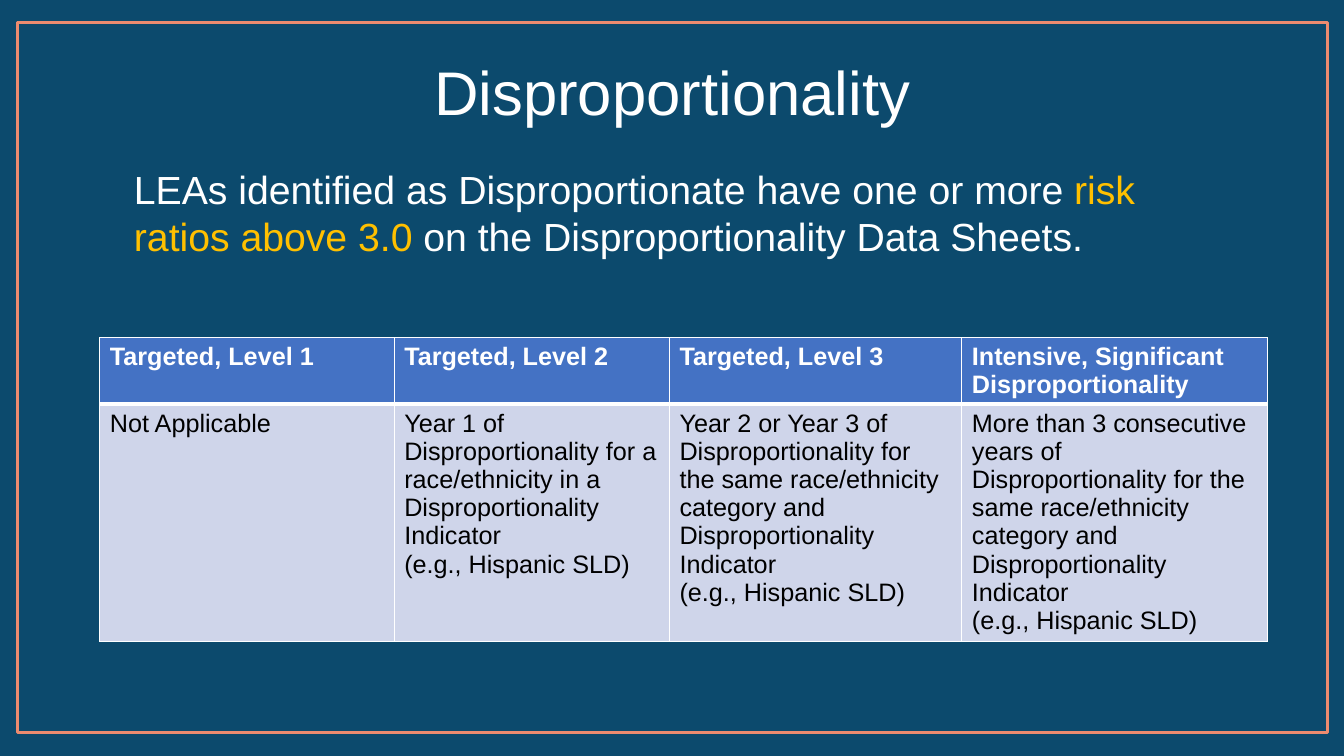
from dataclasses import dataclass

from lxml import etree
from pptx import Presentation
from pptx.dml.color import RGBColor
from pptx.enum.shapes import MSO_SHAPE
from pptx.enum.text import MSO_ANCHOR, PP_ALIGN
from pptx.oxml.ns import qn
from pptx.util import Inches, Pt

RECTANGLE = MSO_SHAPE.RECTANGLE
MIDDLE = MSO_ANCHOR.MIDDLE
CENTER = PP_ALIGN.CENTER


@dataclass(frozen=True)
class Theme:
    font: str = "Arial"
    background: str = "0C4A6D"
    frame: str = "ED8B6F"
    white: str = "FFFFFF"
    black: str = "000000"
    highlight: str = "FFC000"
    header_fill: str = "4472C4"
    body_fill: str = "CFD5EA"
    title_size: int = 44
    body_size: int = 28
    table_size: int = 18
    border: int = 1
    header_rule: int = 3


@dataclass(frozen=True)
class Level:
    heading: str
    criteria: str
    width: float


THEME = Theme()
EXAMPLE = "\n(e.g., Hispanic SLD)"
INDICATOR = "category and Disproportionality Indicator"
LEVELS = [
    Level("Targeted, Level 1", "Not Applicable", 2.92),
    Level(
        "Targeted, Level 2",
        "Year 1 of Disproportionality for a race/ethnicity in a "
        "Disproportionality Indicator" + EXAMPLE,
        2.73,
    ),
    Level(
        "Targeted, Level 3",
        f"Year 2 or Year 3 of Disproportionality for the same race/ethnicity {INDICATOR}{EXAMPLE}",
        2.9,
    ),
    Level(
        "Intensive, Significant Disproportionality",
        "More than 3 consecutive years of Disproportionality for the same "
        f"race/ethnicity {INDICATOR}{EXAMPLE}",
        3.03,
    ),
]
STATEMENT = [
    ("LEAs identified as Disproportionate have one or more ", THEME.white),
    ("risk ratios above 3.0 ", THEME.highlight),
    ("on the Disproportionality Data Sheets.", THEME.white),
]
ROW_HEIGHTS = [0.65, 2.35]


def format_run(run, size: int, color: str, bold: bool = False) -> None:
    run.font.name = THEME.font
    run.font.size = Pt(size)
    run.font.bold = bold
    run.font.color.rgb = RGBColor.from_string(color)


def set_borders(cell, bottom_width: int) -> None:
    properties = cell._tc.get_or_add_tcPr()
    for index, side in enumerate(("lnL", "lnR", "lnT", "lnB")):
        width = bottom_width if side == "lnB" else THEME.border
        line = etree.Element(qn(f"a:{side}"), w=str(Pt(width)))
        fill = etree.SubElement(line, qn("a:solidFill"))
        etree.SubElement(fill, qn("a:srgbClr"), val=THEME.white)
        properties.insert(index, line)


def fill_cell(cell, text: str, is_header: bool) -> None:
    cell.text_frame.text = text
    color = THEME.white if is_header else THEME.black
    for paragraph in cell.text_frame.paragraphs:
        for run in paragraph.runs:
            format_run(run, THEME.table_size, color, is_header)
    cell.fill.solid()
    fill = THEME.header_fill if is_header else THEME.body_fill
    cell.fill.fore_color.rgb = RGBColor.from_string(fill)
    set_borders(cell, THEME.header_rule if is_header else THEME.border)


def add_title(slide) -> None:
    title = slide.shapes.title
    title.left, title.top = Inches(0.17), Inches(0.22)
    title.width, title.height = Inches(13), Inches(1.45)
    title.text_frame.text = "Disproportionality"
    title.text_frame.vertical_anchor = MIDDLE
    paragraph = title.text_frame.paragraphs[0]
    paragraph.alignment = CENTER
    paragraph.line_spacing = 0.9
    format_run(paragraph.runs[0], THEME.title_size, THEME.white)


def add_frame(slide) -> None:
    frame = slide.shapes.add_shape(
        RECTANGLE, Inches(0.17), Inches(0.22), Inches(13), Inches(7.05)
    )
    frame.shadow.inherit = False
    frame.fill.background()
    frame.line.color.rgb = RGBColor.from_string(THEME.frame)
    frame.line.width = Pt(2)
    slide.shapes.title.element.addprevious(frame.element)


def add_levels_table(slide) -> None:
    width = sum(level.width for level in LEVELS)
    table = slide.shapes.add_table(
        len(ROW_HEIGHTS), len(LEVELS), Inches(0.99), Inches(3.35),
        Inches(width), Inches(sum(ROW_HEIGHTS)),
    ).table
    for row, height in zip(table.rows, ROW_HEIGHTS):
        row.height = Inches(height)
    for index, level in enumerate(LEVELS):
        table.columns[index].width = Inches(level.width)
        fill_cell(table.cell(0, index), level.heading, True)
        fill_cell(table.cell(1, index), level.criteria, False)


def add_statement(slide) -> None:
    box = slide.shapes.add_textbox(
        Inches(1.23), Inches(1.59), Inches(10.88), Inches(1.04)
    )
    box.text_frame.word_wrap = True
    paragraph = box.text_frame.paragraphs[0]
    for text, color in STATEMENT:
        run = paragraph.add_run()
        run.text = text
        format_run(run, THEME.body_size, color)


def main() -> None:
    presentation = Presentation()
    presentation.slide_width = Inches(13.33)
    presentation.slide_height = Inches(7.5)
    slide = presentation.slides.add_slide(presentation.slide_layouts.get_by_name("Title Only"))
    slide.background.fill.solid()
    slide.background.fill.fore_color.rgb = RGBColor.from_string(THEME.background)
    add_title(slide)
    add_frame(slide)
    add_levels_table(slide)
    add_statement(slide)
    presentation.save("out.pptx")


if __name__ == "__main__":
    main()
